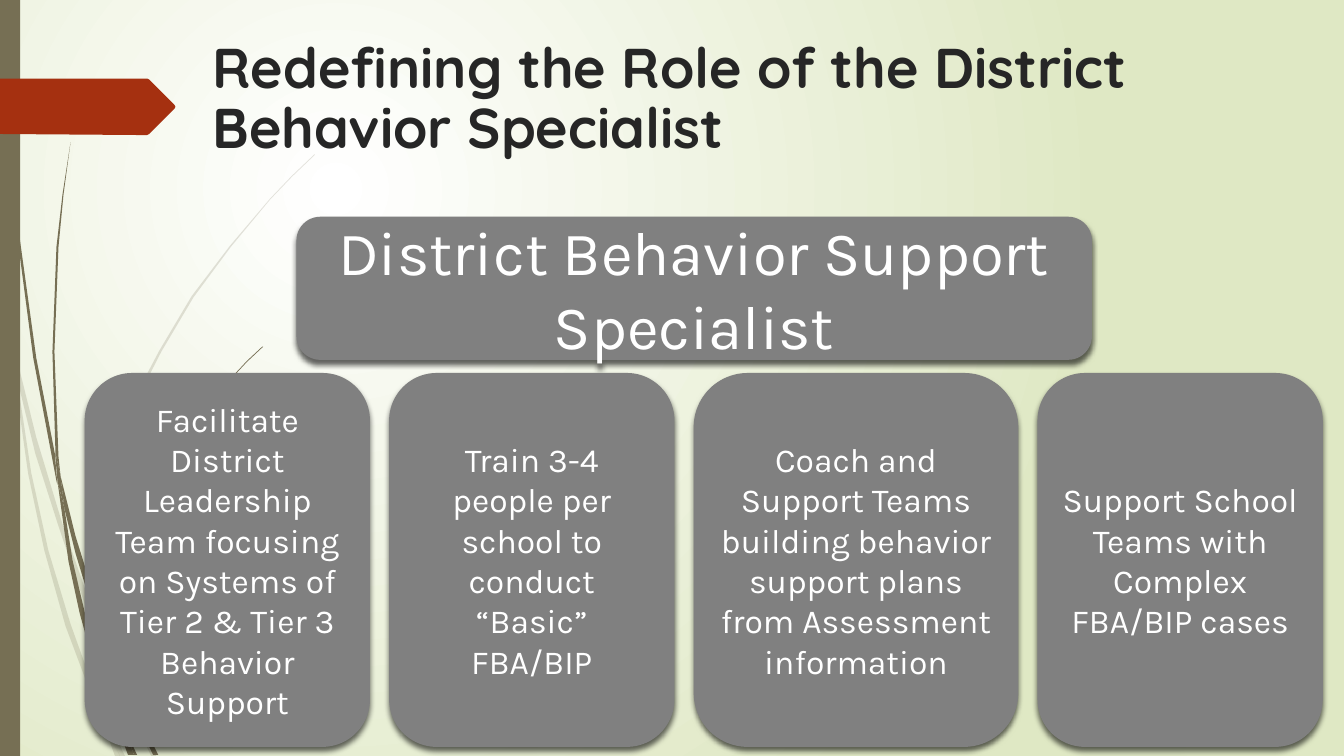
from dataclasses import dataclass

from pptx import Presentation
from pptx.dml.color import RGBColor
from pptx.enum.shapes import MSO_SHAPE
from pptx.enum.text import MSO_ANCHOR, MSO_AUTO_SIZE, PP_ALIGN
from pptx.oxml import parse_xml
from pptx.oxml.ns import nsdecls, qn
from pptx.util import Inches, Pt

RECTANGLE, ROUNDED = MSO_SHAPE.RECTANGLE, MSO_SHAPE.ROUNDED_RECTANGLE
TOP, MIDDLE = MSO_ANCHOR.TOP, MSO_ANCHOR.MIDDLE
LEFT, CENTER = PP_ALIGN.LEFT, PP_ALIGN.CENTER
SHRINK = MSO_AUTO_SIZE.TEXT_TO_FIT_SHAPE

OLIVE, RUST, GRAY, INK, WHITE, PALE_GREEN = (
    "766F54", "A53010", "808080", "262626", "FFFFFF", "DFE8C4")
SLIDE_HEIGHT = 7.5
CARD_LEFT, CARD_TOP, CARD_HEIGHT, CARD_GAP = 0.84, 3.7, 3.71, 0.19

Points = list[tuple[float, float]]


@dataclass
class Card:
    text: str
    width: float = 2.83


CARDS = [
    Card("Facilitate District Leadership Team focusing on Systems of "
         "Tier 2 & Tier 3 Behavior Support"),
    Card("Train 3-4 people per school to conduct “Basic” FBA/BIP"),
    Card("Coach and Support Teams building behavior support plans "
         "from Assessment information", 3.22),
    Card("Support School Teams with Complex FBA/BIP cases"),
]

FAINT_GRASS: list[Points] = [
    [(0.11, 3.5), (0.09, 3.22), (0, 2.82), (0, 2.99), (0.1, 3.44)],
    [(0.58, 5.22), (0.84, 5.99), (0.85, 5.86), (0.62, 5.2), (0.36, 4.34),
     (0.14, 3.45), (0.17, 3.76), (0.35, 4.5)],
    [(0.92, 6.07), (0.88, 5.96), (0.88, 6.1), (1.23, 6.94), (1.5, 7.5),
     (1.55, 7.5), (1.27, 6.92)],
    [(1.19, 7.5), (1.24, 7.5), (1.05, 7.11)],
    [(0.93, 6.83), (0.7, 6.19), (0.48, 5.46), (0.31, 4.69), (0.17, 3.76),
     (0.11, 3.5), (0.28, 4.7), (0.44, 5.46), (0.65, 6.21), (0.92, 6.93),
     (1.01, 7.14), (0.99, 7.07)],
    [(0.84, 5.99), (0.87, 6.46), (0.93, 6.83), (0.96, 6.92), (1.05, 7.11),
     (1.03, 7.06), (0.91, 6.46), (0.88, 6.1), (0.88, 6.08)],
    [(0.88, 5.84), (0.95, 5.22), (1.1, 4.62), (1.32, 4.04), (1.6, 3.49),
     (1.92, 2.95), (2.29, 2.45), (2.68, 1.98), (2.9, 1.75), (3.12, 1.54),
     (3.12, 1.53), (2.89, 1.75), (2.68, 1.97), (2.28, 2.44), (1.9, 2.94),
     (1.58, 3.48), (1.29, 4.03), (1.07, 4.61), (0.91, 5.22), (0.85, 5.84),
     (0.85, 5.86), (0.88, 5.96)],
    [(1.01, 7.14), (1.14, 7.5), (1.19, 7.5)],
    [(0.88, 6.08), (0.88, 6.1), (0.88, 5.96), (0.85, 5.86), (0.84, 5.99)],
    [(0.96, 6.92), (0.93, 6.83), (0.99, 7.07), (1.01, 7.14), (1.19, 7.5),
     (1.05, 7.11)],
]

DARK_GRASS: list[Points] = [
    [(0.07, 1.1), (0.17, 2.33), (0.33, 3.55), (0.56, 4.77), (0.57, 4.81),
     (0.55, 4.57), (0.55, 4.53), (0.36, 3.55), (0.19, 2.32), (0.08, 1.09),
     (0.05, 0.48), (0.04, 0), (0.03, 0), (0.04, 0.48)],
    [(0.88, 5.92), (1.06, 6.45), (1.06, 6.33), (1.06, 6.31), (0.93, 5.9),
     (0.75, 5.32), (0.6, 4.72), (0.64, 5.05), (0.75, 5.49)],
    [(1.13, 6.49), (1.1, 6.41), (1.11, 6.56), (1.32, 7.08), (1.52, 7.49),
     (1.57, 7.49), (1.36, 7.06)],
    [(1.1, 6.91), (0.98, 6.57), (0.84, 6.07), (0.72, 5.56), (0.64, 5.05),
     (0.57, 4.77), (0.68, 5.57), (0.79, 6.08), (0.93, 6.59), (1.11, 7.08),
     (1.17, 7.22), (1.16, 7.17)],
    [(0.6, 4.72), (0.58, 4.53), (0.54, 3.49), (0.58, 2.45), (0.63, 1.93),
     (0.7, 1.41), (0.62, 1.93), (0.56, 2.45), (0.52, 3.49), (0.55, 4.49)],
    [(1.33, 7.49), (1.36, 7.49), (1.22, 7.19)],
    [(0.57, 4.77), (0.64, 5.05), (0.6, 4.72), (0.55, 4.49), (0.55, 4.53)],
    [(1.11, 6.33), (1.15, 5.92), (1.25, 5.52), (1.4, 5.13), (1.58, 4.76),
     (1.8, 4.4), (2.05, 4.06), (2.31, 3.74), (2.45, 3.59), (2.61, 3.44),
     (2.6, 3.44), (2.45, 3.58), (2.31, 3.73), (2.04, 4.05), (1.78, 4.39),
     (1.56, 4.74), (1.37, 5.12), (1.22, 5.51), (1.11, 5.91), (1.06, 6.31),
     (1.1, 6.41)],
    [(1.17, 7.22), (1.27, 7.49), (1.31, 7.49)],
    [(1.16, 7.06), (1.1, 6.91), (1.16, 7.17), (1.17, 7.22), (1.3, 7.49),
     (1.33, 7.49), (1.22, 7.19)],
]

RIBBON: Points = [
    (0, 0.78), (1.46, 0.78), (1.48, 0.79), (1.73, 1.04), (1.74, 1.06),
    (1.73, 1.08), (1.48, 1.33), (1.46, 1.34), (1.36, 1.34), (0, 1.33)]


def color(code: str) -> RGBColor:
    return RGBColor.from_string(code)


def paint(shape, code: str, alpha: int = 100) -> None:
    """Give a shape a plain fill with no outline or shadow."""
    shape.shadow.inherit = False
    shape.fill.solid()
    shape.fill.fore_color.rgb = color(code)
    shape.line.fill.background()
    if alpha < 100:
        tint = shape.element.spPr.find(f".//{qn('a:srgbClr')}")
        tint.append(parse_xml(f'<a:alpha {nsdecls("a")} val="{alpha * 1000}"/>'))


def add_outline(page, points: Points, code: str, alpha: int = 100) -> None:
    corners = [(Inches(x), Inches(y)) for x, y in points]
    builder = page.shapes.build_freeform(*corners[0])
    builder.add_line_segments(corners[1:], close=True)
    paint(builder.convert_to_shape(), code, alpha)


def write(frame, text: str, align: PP_ALIGN, formats: dict) -> None:
    para = frame.paragraphs[0]
    para.alignment = align
    span = para.add_run()
    span.text = text
    span.font.color.rgb = color(formats["color"])
    for name, value in formats.items():
        if name != "color":
            setattr(span.font, name, value)


def add_box(page, left: float, top: float, width: float, height: float,
            text: str, size: int) -> None:
    """Draw a shadowed rounded box with centred text."""
    box = page.shapes.add_shape(
        ROUNDED, Inches(left), Inches(top), Inches(width), Inches(height))
    paint(box, GRAY)
    box.element.spPr.find(qn("a:effectLst")).append(parse_xml(
        f'<a:outerShdw {nsdecls("a")} blurRad="{Pt(4)}" dist="{Pt(3)}" '
        'dir="5400000" rotWithShape="0"><a:srgbClr val="000000">'
        '<a:alpha val="60000"/></a:srgbClr></a:outerShdw>'))
    box.text_frame.word_wrap = True
    box.text_frame.vertical_anchor = MIDDLE
    write(box.text_frame, text, CENTER,
          {"size": Pt(size), "name": "Karla", "color": WHITE})


def set_background(page) -> None:
    fill = page.background.fill
    fill.gradient()
    for stop, code in zip(fill.gradient_stops, (WHITE, PALE_GREEN)):
        stop.color.rgb = color(code)
    gradient = page.element.find(f".//{qn('a:gradFill')}")
    gradient.replace(gradient.find(qn("a:lin")), parse_xml(
        f'<a:path {nsdecls("a")} path="circle"><a:fillToRect l="50000" '
        't="50000" r="100000" b="100000"/></a:path>'))


def add_title(page) -> None:
    title = page.shapes.title
    title.element.getparent().append(title.element)
    place = {"left": 2.01, "top": 0.27, "width": 11.12, "height": 1.4}
    for name, value in place.items():
        setattr(title, name, Inches(value))
    frame = title.text_frame
    for name, value in {"word_wrap": True, "vertical_anchor": TOP,
                        "auto_size": SHRINK}.items():
        setattr(frame, name, value)
    title.element.find(f".//{qn('a:normAutofit')}").set("fontScale", "90000")
    write(frame, "Redefining the Role of the District Behavior Specialist", LEFT,
          {"size": Pt(40), "name": "Quicksand", "bold": True, "color": INK})


def main() -> None:
    deck = Presentation()
    deck.slide_width, deck.slide_height = Inches(13.33), Inches(SLIDE_HEIGHT)
    page = deck.slides.add_slide(deck.slide_layouts.get_by_name("Title Only"))
    set_background(page)
    for blades, alpha in ((FAINT_GRASS, 20), (DARK_GRASS, 100)):
        for blade in blades:
            add_outline(page, blade, OLIVE, alpha)
    paint(page.shapes.add_shape(
        RECTANGLE, 0, 0, Inches(0.2), Inches(SLIDE_HEIGHT)), OLIVE)
    add_outline(page, RIBBON, RUST)
    add_title(page)
    add_box(page, 2.94, 2.15, 7.89, 1.42, "District Behavior Support Specialist", 44)
    left = CARD_LEFT
    for card in CARDS:
        add_box(page, left, CARD_TOP, card.width, CARD_HEIGHT, card.text, 24)
        left += card.width + CARD_GAP
    deck.save("out.pptx")


if __name__ == "__main__":
    main()
